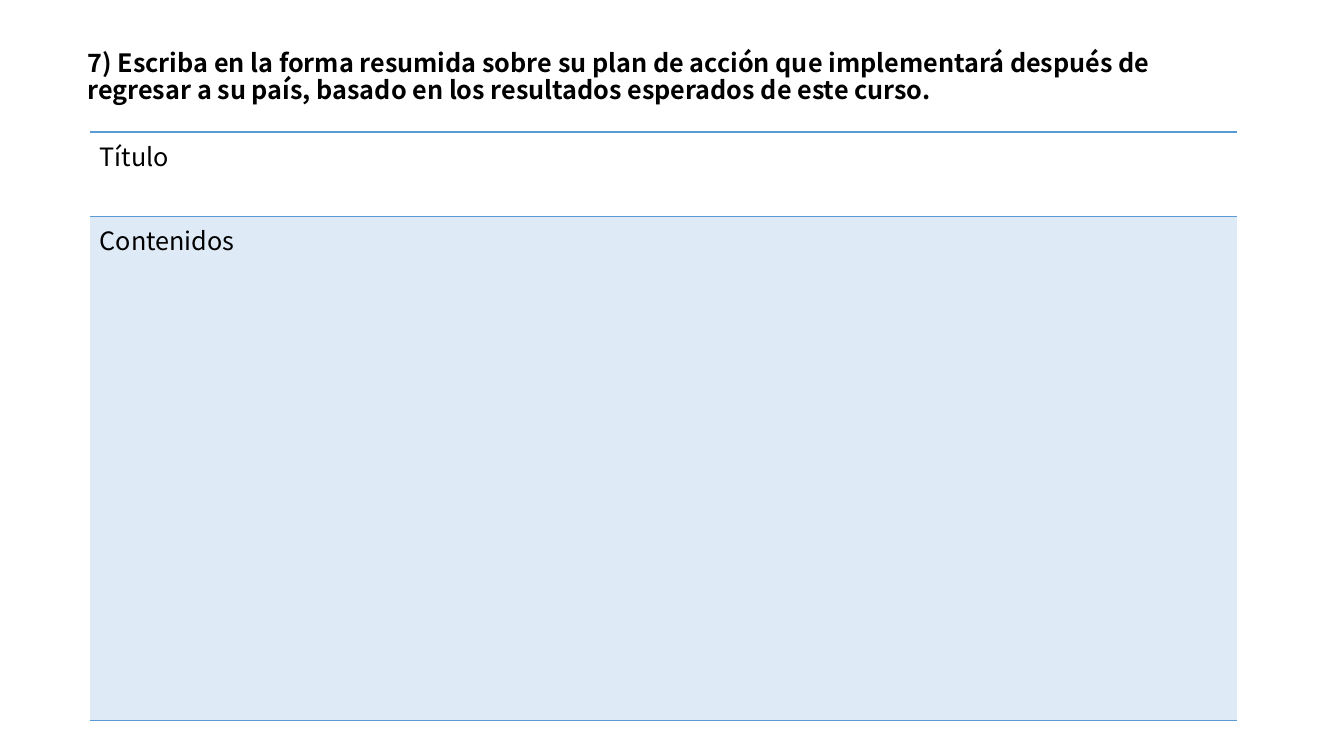
from lxml import etree
from pptx import Presentation
from pptx.dml.color import RGBColor
from pptx.enum.text import MSO_ANCHOR
from pptx.oxml.ns import qn
from pptx.util import Inches, Pt

MIDDLE = MSO_ANCHOR.MIDDLE
BLACK = RGBColor(0x00, 0x00, 0x00)
BLUE = RGBColor(0x5B, 0x9B, 0xD5)
PALE_BLUE = RGBColor(0xDE, 0xEB, 0xF7)
FONT = "Noto Sans CJK JP"
SLIDE_WIDTH, SLIDE_HEIGHT = Inches(13.33), Inches(7.5)
COLUMN_WIDTHS = (2.59, 8.79)
ROWS = (("Título", 0.84, None), ("Contenidos", 5, PALE_BLUE))
QUESTION = (
    "7) Escriba en la forma resumida sobre su plan de acción que implementará "
    "después de regresar a su país, basado en los resultados esperados de este curso."
)


def write_text(frame, text, size=18, bold=False, spacing=None):
    para = frame.paragraphs[0]
    para.line_spacing = spacing
    span = para.add_run()
    span.text = text
    span.font.name = FONT
    span.font.size = Pt(size)
    span.font.bold = bold
    span.font.color.rgb = BLACK


def add_heading(page, text):
    box = page.shapes.add_textbox(Inches(0.77), Inches(0.05), Inches(11.5), Inches(1.45))
    box.text_frame.word_wrap = True
    box.text_frame.vertical_anchor = MIDDLE
    write_text(box.text_frame, text, bold=True, spacing=0.9)


def set_borders(cell, color, width=1):
    properties = cell._tc.get_or_add_tcPr()
    for position, side in enumerate(("lnL", "lnR", "lnT", "lnB")):
        line = etree.Element(qn(f"a:{side}"), w=str(Pt(width)))
        if side in ("lnT", "lnB"):
            fill = etree.SubElement(line, qn("a:solidFill"))
            etree.SubElement(fill, qn("a:srgbClr"), val=str(color))
        else:
            etree.SubElement(line, qn("a:noFill"))
        properties.insert(position, line)


def style_cell(cell, fill_color):
    if fill_color is None:
        cell.fill.background()
    else:
        cell.fill.solid()
        cell.fill.fore_color.rgb = fill_color
    set_borders(cell, BLUE)


def add_plan_table(page):
    height = sum(row_height for _, row_height, _ in ROWS)
    table = page.shapes.add_table(
        len(ROWS), len(COLUMN_WIDTHS), Inches(0.89), Inches(1.31),
        Inches(sum(COLUMN_WIDTHS)), Inches(height),
    ).table
    table.first_row = False
    table.horz_banding = False
    for column, width in zip(table.columns, COLUMN_WIDTHS):
        column.width = Inches(width)
    for row, (label, row_height, fill_color) in zip(table.rows, ROWS):
        row.height = Inches(row_height)
        for cell in row.cells:
            style_cell(cell, fill_color)
        write_text(row.cells[0].text_frame, label)


def main():
    deck = Presentation()
    deck.slide_width, deck.slide_height = SLIDE_WIDTH, SLIDE_HEIGHT
    page = deck.slides.add_slide(deck.slide_layouts[6])
    add_heading(page, QUESTION)
    add_plan_table(page)
    deck.save("out.pptx")


if __name__ == "__main__":
    main()
